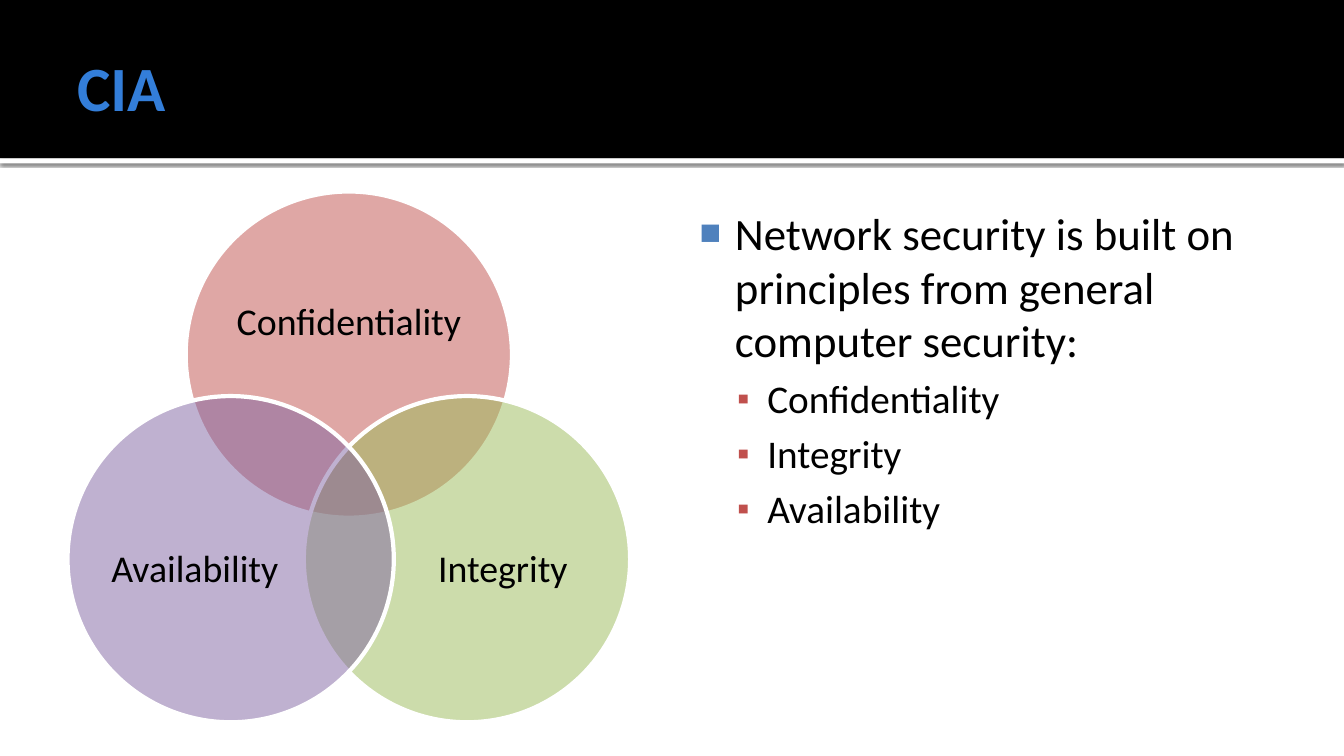
from math import cos, radians, sin

from lxml.etree import SubElement as Sub
from pptx import Presentation
from pptx.dml.color import RGBColor
from pptx.enum.shapes import MSO_SHAPE as Shape
from pptx.enum.text import MSO_ANCHOR as Anchor, PP_ALIGN as Align
from pptx.oxml.ns import qn
from pptx.util import Inches, Pt

WIDE, HIGH = 13.33, 7.5
FONT = "Calibri"
BLACK, WHITE = "000000", "FFFFFF"
SETS = [
    ("Confidentiality", "C0504D", -90, (0.13, 0.18, 0.74, 0.45)),
    ("Integrity", "9BBB59", 30, (0.31, 0.26, 0.6, 0.55)),
    ("Availability", "8064A2", 150, (0.09, 0.26, 0.6, 0.55)),
]
LEAD = "Network security is built on principles from general computer security:"


def color(code):
    """Turn a hex string into a colour."""
    return RGBColor.from_string(code)


def inches(box):
    """Turn a box in inches into lengths."""
    return [Inches(n) for n in box]


def add_fill(slide, kind, box, code):
    """Add a plain filled shape without line or shadow."""
    shape = slide.shapes.add_shape(kind, *inches(box))
    shape.shadow.inherit = False
    shape.fill.solid()
    shape.fill.fore_color.rgb = color(code)
    shape.line.fill.background()
    return shape


def add_frame(slide, box, pads, anchor=Anchor.TOP):
    """Add a wrapping text box and return its frame."""
    frame = slide.shapes.add_textbox(*inches(box)).text_frame
    frame.word_wrap = True
    frame.vertical_anchor = anchor
    (frame.margin_left, frame.margin_top,
     frame.margin_right, frame.margin_bottom) = inches(pads)
    return frame


def set_text(para, text, size, code=BLACK, bold=False):
    """Write a paragraph in one style."""
    para.text = text
    font = para.font
    font.name, font.size, font.bold = FONT, Pt(size), bold
    font.color.rgb = color(code)


def add_mark(para, sign, code, share, left, hang):
    """Give a paragraph a coloured bullet and a hanging indent."""
    props = para._p.get_or_add_pPr()
    props.set("marL", str(Inches(left)))
    props.set("indent", str(-Inches(hang)))
    Sub(Sub(props, qn("a:buClr")), qn("a:srgbClr"), val=code)
    Sub(props, qn("a:buSzPct"), val=str(share * 1000))
    Sub(props, qn("a:buFont"), typeface="Arial")
    Sub(props, qn("a:buChar"), char=sign)


def add_head(slide, box):
    """Place the black title band, its shadowed rule and the title."""
    x, y, w, h = box
    rule = add_fill(slide, Shape.RECTANGLE, (x, y + h, w, 0.05), WHITE)
    glow = Sub(rule._element.spPr.find(qn("a:effectLst")), qn("a:outerShdw"),
               blurRad=str(Pt(2.5)), dist=str(Pt(0.8)), dir="5400000",
               rotWithShape="0")
    tint = Sub(glow, qn("a:srgbClr"), val=BLACK)
    Sub(tint, qn("a:alpha"), val="60000")
    add_fill(slide, Shape.RECTANGLE, box, BLACK)
    frame = add_frame(slide, (x + 0.05 * w, y + 0.17, 0.9 * w, h - 0.2),
                      (0.1, 0.05, 0.05, 0.05), Anchor.MIDDLE)
    set_text(frame.paragraphs[0], "CIA", 45, "337ED9", True)


def add_venn(slide, box):
    """Place three see-through circles around a centre, with labels."""
    x, y, w, h = box
    size = 0.58 * w
    reach = (w - size) / 2 / cos(radians(30))
    mid, hub = x + w / 2, y + size / 2 + reach
    for name, code, turn, (dx, dy, dw, dh) in SETS:
        left = mid + reach * cos(radians(turn)) - size / 2
        top = hub + reach * sin(radians(turn)) - size / 2
        disc = add_fill(slide, Shape.OVAL, (left, top, size, size), code)
        tint = disc._element.spPr.find(qn("a:solidFill"))[0]
        Sub(tint, qn("a:alpha"), val="50000")
        disc.line.color.rgb = color(WHITE)
        disc.line.width = Pt(3)
        spot = (left + dx * size, top + dy * size, dw * size, dh * size)
        frame = add_frame(slide, spot, (0, 0, 0, 0), Anchor.MIDDLE)
        para = frame.paragraphs[0]
        set_text(para, name, 27)
        para.alignment = Align.CENTER
        para.line_spacing = 0.9


def add_list(slide, box):
    """Place the lead bullet and one sub-bullet for each set."""
    frame = add_frame(slide, box, (0.06, 0.1, 0.1, 0.05))
    lead = frame.paragraphs[0]
    add_mark(lead, "■", "4F81BD", 80, 0.48, 0.35)
    set_text(lead, LEAD, 32)
    for name, *_ in SETS:
        para = frame.add_paragraph()
        para.level = 1
        add_mark(para, "▪", "C0504D", 90, 0.8, 0.3)
        para.space_before = Pt(5.6)
        set_text(para, name, 28)


def main():
    """Build and save the slide."""
    deck = Presentation()
    deck.slide_width, deck.slide_height = Inches(WIDE), Inches(HIGH)
    slide = deck.slides.add_slide(deck.slide_layouts[6])
    add_head(slide, (0, 0, WIDE, 1.57))
    add_list(slide, (6.75, 1.94, 5.92, 5.06))
    add_venn(slide, (0.67, 1.9, 5.58, 5.27))
    deck.save("out.pptx")


if __name__ == "__main__":
    main()
